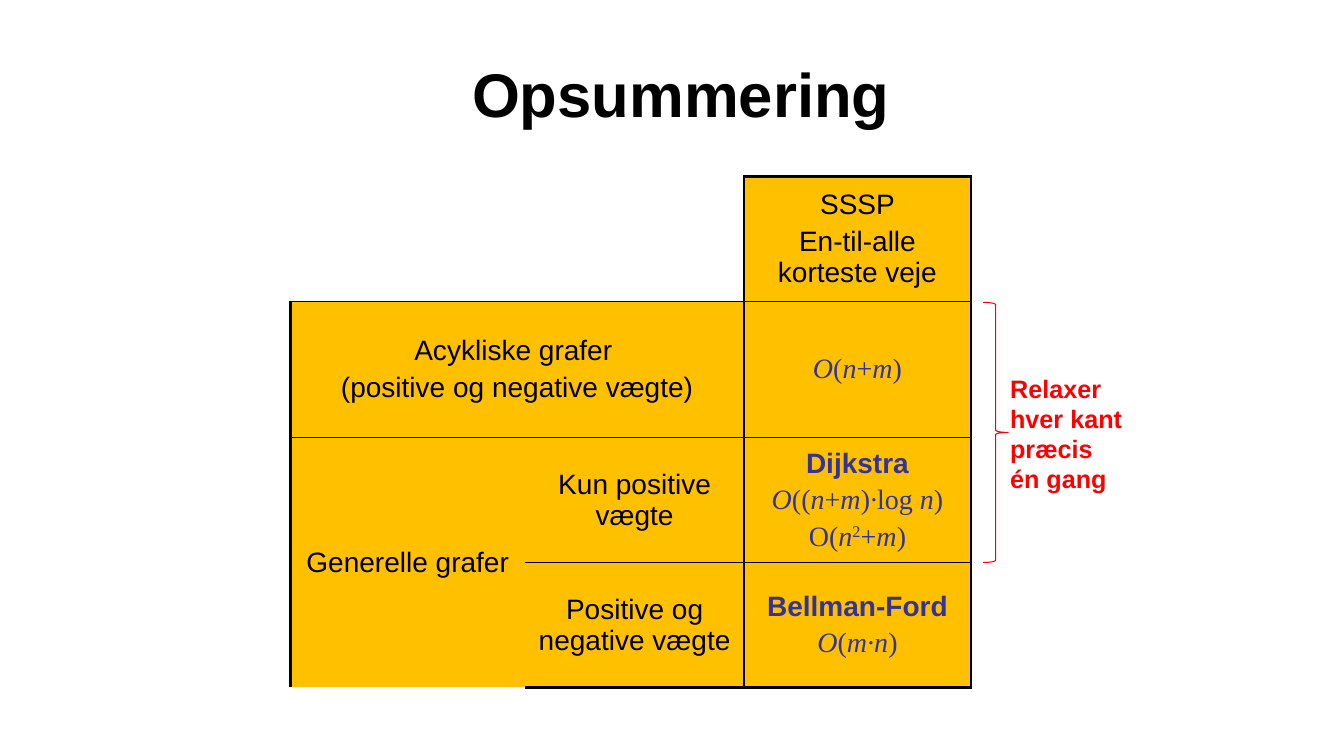
from lxml import etree
from pptx import Presentation
from pptx.dml.color import RGBColor
from pptx.enum.shapes import MSO_SHAPE
from pptx.enum.text import MSO_ANCHOR, PP_ALIGN
from pptx.oxml.ns import qn
from pptx.util import Inches, Pt

BLACK, BLUE, RED, AMBER = "000000", "333399", "FF0000", "FFC000"
COLS = [2.33, 2.17, 2.25]
ROWS = [1.24, 1.35, 1.24, 1.24]
LEFT, TOP = 2.88, 1.75
NO_STYLE = "{2D5ABB26-0587-4C30-8999-92F81FD0307C}"


def style(font, size, color, bold=False, name="Arial"):
    font.name, font.size, font.bold = name, Pt(size), bold
    font.color.rgb = RGBColor.from_string(color)


def border(cell, index, side, width):
    """Put one edge line into the cell; a width of 0 hides the edge."""
    ln = etree.Element(qn(f"a:ln{side}"), w=str(Pt(width)))
    if width:
        fill = etree.SubElement(ln, qn("a:solidFill"))
        etree.SubElement(fill, qn("a:srgbClr"), val=BLACK)
    else:
        etree.SubElement(ln, qn("a:noFill"))
    cell._tc.get_or_add_tcPr().insert(index, ln)


prs = Presentation()
prs.slide_width, prs.slide_height = Inches(13.33), Inches(7.5)
s = prs.slides.add_slide(prs.slide_layouts[5])

title = s.shapes.title
title.left, title.top = Inches(2.17), Inches(0.3)
title.width, title.height = Inches(9.17), Inches(1.25)
tf = title.text_frame
tf.text = "Opsummering"
tf.vertical_anchor = MSO_ANCHOR.MIDDLE
p = tf.paragraphs[0]
p.alignment = PP_ALIGN.CENTER
style(p.font, 44, BLACK, bold=True)

# Table grid
table = s.shapes.add_table(
    len(ROWS), len(COLS), Inches(LEFT), Inches(TOP),
    Inches(sum(COLS)), Inches(sum(ROWS))).table
table.first_row = table.horz_banding = False
table._tbl.tblPr.find(qn("a:tableStyleId")).text = NO_STYLE
for col, width in zip(table.columns, COLS):
    col.width = Inches(width)
for row, height in zip(table.rows, ROWS):
    row.height = Inches(height)

# Fills and edges: thick outer edges, open corner, no line between columns 0 and 1
for r in range(len(ROWS)):
    for c in range(len(COLS)):
        cell = table.cell(r, c)
        cell.vertical_anchor = MSO_ANCHOR.MIDDLE
        corner = r == 0 and c < 2
        if corner:
            cell.fill.background()
        else:
            cell.fill.solid()
            cell.fill.fore_color.rgb = RGBColor.from_string(AMBER)
        edges = {
            "L": 0 if corner or c == 1 else 2.25 if c == 0 else 1,
            "R": 0 if c == 0 else 1,
            "T": 0 if corner or (r, c) == (3, 0) else 2.25 if r == 0 else 1,
            "B": 0 if (r, c) == (2, 0) else 2.25 if r == 3 else 1,
        }
        for i, (side, width) in enumerate(edges.items()):
            border(cell, i, side, width)

for first, last in [((0, 0), (0, 1)), ((1, 0), (1, 1)), ((2, 0), (3, 0))]:
    table.cell(*first).merge(table.cell(*last))

# In formulas, * switches italics on and off and ^ marks a superscript piece
texts = {
    (0, 2): ["SSSP", "En-til-alle korteste veje"],
    (1, 0): ["Acykliske grafer ", "(positive og negative vægte)"],
    (1, 2): ["*O*(*n*+*m*)"],
    (2, 0): ["Generelle grafer"],
    (2, 1): ["Kun positive vægte"],
    (2, 2): ["Dijkstra", "*O*((*n*+*m*)*·*log *n*)", "O(*n*^2**+*m*)"],
    (3, 1): ["Positive og negative vægte"],
    (3, 2): ["Bellman-Ford", "*O*(*m·n*)"],
}
for (row, col), lines in texts.items():
    tf = table.cell(row, col).text_frame
    result = col == 2 and row > 0
    for i, line in enumerate(lines):
        p = tf.add_paragraph() if i else tf.paragraphs[0]
        p.alignment = PP_ALIGN.CENTER
        p.space_before = Pt(4)
        formula = "*" in line
        for k, piece in enumerate(line.split("*")):
            if not piece:
                continue
            r = p.add_run()
            r.text = piece.lstrip("^")
            style(r.font, 20, BLUE if result else BLACK, result and not formula,
                  "Times New Roman" if formula else "Arial")
            r.font.italic = k % 2 == 1
            if piece.startswith("^"):
                r._r.get_or_add_rPr().set("baseline", "30000")

# Brace over the two middle rows, with its note
brace = s.shapes.add_shape(
    MSO_SHAPE.RIGHT_BRACE, Inches(9.75), Inches(3), Inches(0.25), Inches(2.58))
brace.adjustments[0], brace.adjustments[1] = 0.083, 0.5
brace.shadow.inherit = False
brace.fill.background()
brace.line.color.rgb = RGBColor.from_string(RED)
brace.line.width = Pt(0.75)

note = s.shapes.add_textbox(Inches(9.92), Inches(3.65), Inches(1.33), Inches(1.31))
tf = note.text_frame
tf.word_wrap = True
tf.text = "Relaxer hver kant præcis én gang"
style(tf.paragraphs[0].font, 18, RED, bold=True)

prs.save("out.pptx")
